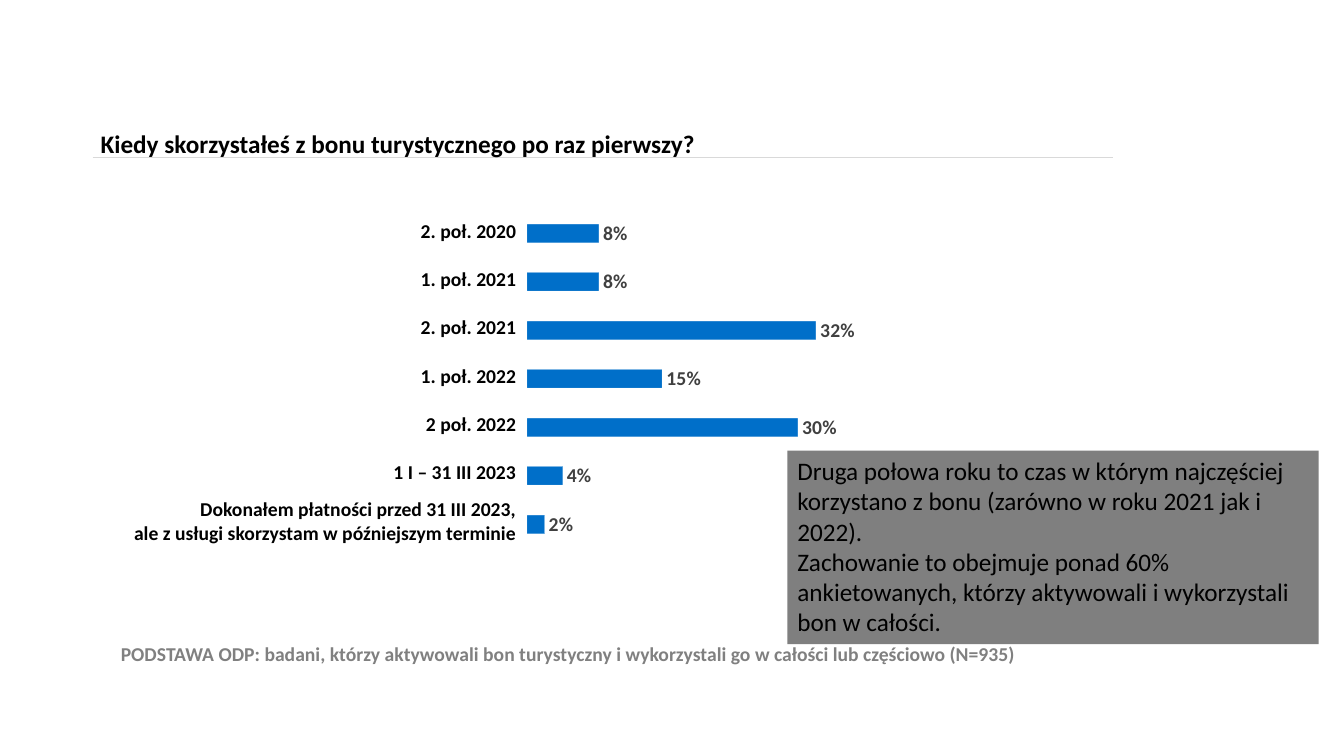
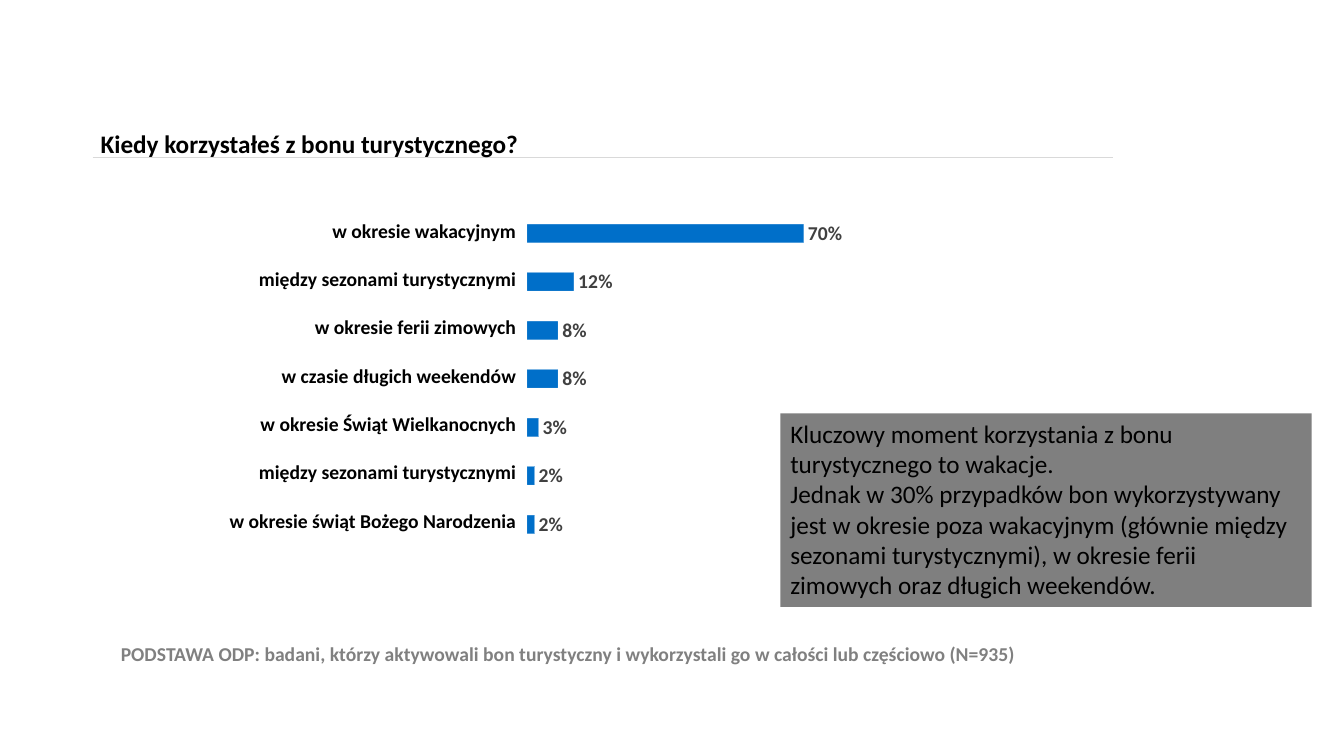
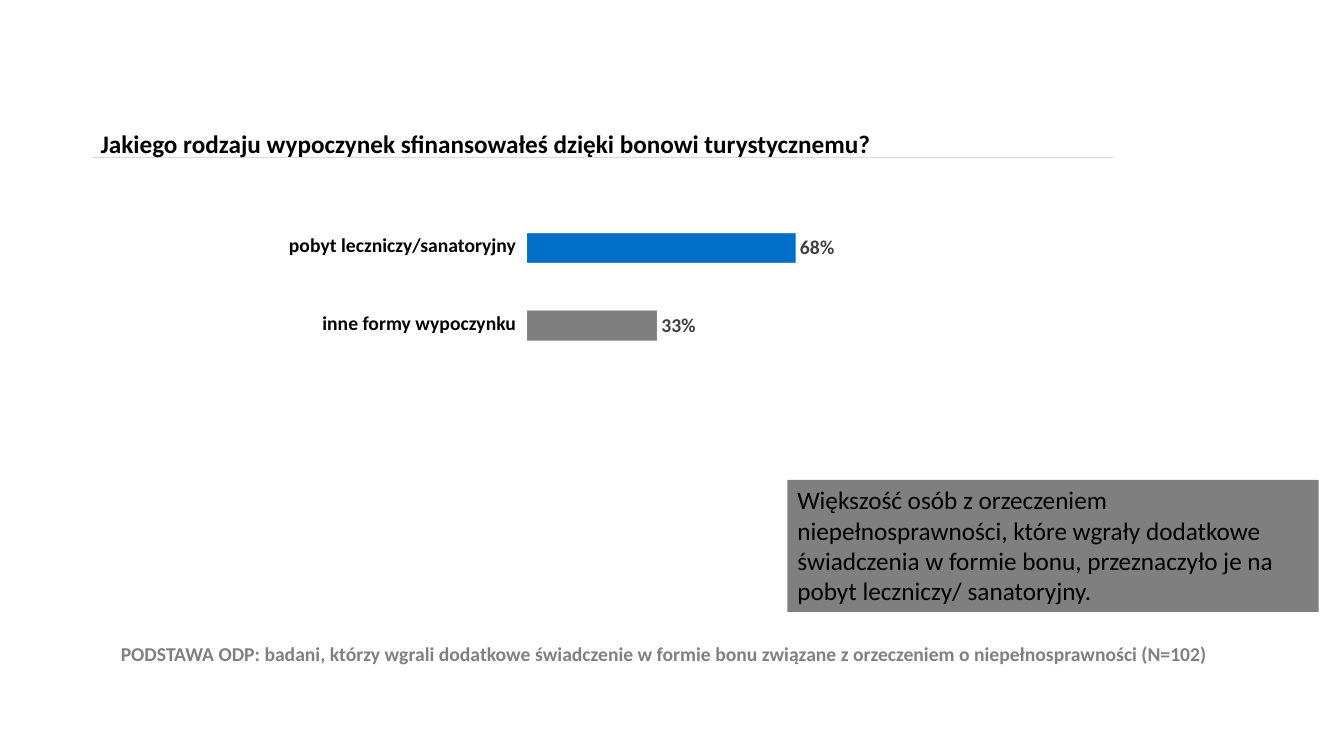
from lxml import etree
from pptx import Presentation
from pptx.chart.data import CategoryChartData as ChartData
from pptx.dml.color import RGBColor
from pptx.enum.chart import XL_CHART_TYPE as Kind, XL_LABEL_POSITION as Place
from pptx.enum.chart import XL_TICK_LABEL_POSITION as Labels, XL_TICK_MARK as Tick
from pptx.enum.shapes import MSO_CONNECTOR as Line
from pptx.enum.text import MSO_ANCHOR as Anchor, MSO_AUTO_SIZE as Size, PP_ALIGN as Align
from pptx.oxml import parse_xml
from pptx.oxml.ns import nsdecls, qn
from pptx.util import Inches, Pt

BLACK = RGBColor(0, 0, 0)
WHITE = RGBColor(255, 255, 255)
BLUE = RGBColor(0x00, 0x6F, 0xC9)
GREY = RGBColor(0x7F, 0x7F, 0x7F)
NOTE = RGBColor(0x80, 0x80, 0x80)
DARK = RGBColor(0x40, 0x40, 0x40)
RULE = RGBColor(0xD9, 0xD9, 0xD9)

FACE = "Calibri"
TITLE = dict(name=FACE, size=Pt(18), bold=True, color=BLACK)
LABEL = dict(name=FACE, size=Pt(14), bold=True, color=BLACK)
BASE = dict(LABEL, color=NOTE)
BODY = dict(TITLE, bold=False)
VALUE = dict(LABEL, color=DARK)

PLOT = dict(x=0.525, y=0.085, w=0.385, h=0.893)
CHART = (0.94, 1.71, 8.16, 4.31)

USERS = "PODSTAWA ODP: badani, którzy aktywowali bon turystyczny i wykorzystali go w całości lub częściowo (N=935)"

# bars: label, value, colour; slots: bar places on the axis; callout: left, top, height
SLIDES = [
    dict(
        title="Kiedy skorzystałeś z bonu turystycznego po raz pierwszy?",
        bars=[
            ("2. poł. 2020", 0.08, BLUE),
            ("1. poł. 2021", 0.08, BLUE),
            ("2. poł. 2021", 0.32, BLUE),
            ("1. poł. 2022", 0.15, BLUE),
            ("2 poł. 2022", 0.3, BLUE),
            ("1 I – 31 III 2023", 0.04, BLUE),
            ("Dokonałem płatności przed 31 III 2023,\n"
             "ale z usługi skorzystam w późniejszym terminie", 0.02, BLUE),
        ],
        slots=8, top=0.35, base=USERS, callout=(7.81, 4.47, 1.92),
        text="Druga połowa roku to czas w którym najczęściej korzystano z bonu "
             "(zarówno w roku 2021 jak i 2022).\n"
             "Zachowanie to obejmuje ponad 60% ankietowanych, którzy aktywowali "
             "i wykorzystali bon w całości.",
    ),
    dict(
        title="Kiedy korzystałeś z bonu turystycznego?",
        bars=[
            ("w okresie wakacyjnym", 0.7, BLUE),
            ("między sezonami turystycznymi", 0.12, BLUE),
            ("w okresie ferii zimowych", 0.08, BLUE),
            ("w czasie długich weekendów", 0.08, BLUE),
            ("w okresie Świąt Wielkanocnych", 0.03, BLUE),
            ("między sezonami turystycznymi", 0.02, BLUE),
            ("w okresie świąt Bożego Narodzenia", 0.02, BLUE),
        ],
        slots=8, top=0.8, base=USERS, callout=(7.74, 4.1, 1.92),
        text="Kluczowy moment korzystania z bonu turystycznego to wakacje.\n"
             "Jednak w 30% przypadków bon wykorzystywany jest w okresie poza wakacyjnym "
             "(głównie między sezonami turystycznymi), w okresie ferii zimowych "
             "oraz długich weekendów.",
    ),
    dict(
        title="Jakiego rodzaju wypoczynek sfinansowałeś dzięki bonowi turystycznemu?",
        bars=[
            ("pobyt leczniczy/sanatoryjny", 0.68, BLUE),
            ("inne formy wypoczynku", 0.33, GREY),
        ],
        slots=5, top=0.8, callout=(7.81, 4.76, 1.31),
        base="PODSTAWA ODP: badani, którzy wgrali dodatkowe świadczenie w formie bonu "
             "związane z orzeczeniem o niepełnosprawności (N=102)",
        text="Większość osób z orzeczeniem niepełnosprawności, które wgrały dodatkowe "
             "świadczenia w formie bonu, przeznaczyło je na pobyt leczniczy/ sanatoryjny.",
    ),
]


def style(font, look):
    for key, value in look.items():
        if key == "color":
            font.color.rgb = value
        else:
            setattr(font, key, value)


def write(frame, text, look, align=Align.LEFT):
    frame.word_wrap = True
    frame.text = text
    for para in frame.paragraphs:
        para.alignment = align
        for run in para.runs:
            style(run.font, look)


def add_text(slide, at, text, look, anchor=Anchor.TOP):
    box = slide.shapes.add_textbox(*map(Inches, at))
    write(box.text_frame, text, look)
    box.text_frame.vertical_anchor = anchor
    return box


def add_rule(slide):
    ends = map(Inches, (0.92, 1.56, 11.04, 1.56))
    rule = slide.shapes.add_connector(Line.STRAIGHT, *ends)
    rule.line.color.rgb = RULE
    rule.line.width = Pt(0.75)
    etree.SubElement(rule._element.spPr, qn("a:effectLst"))


def paint(form, color):
    """Fill a bar and give it a half-clear white edge."""
    form.fill.solid()
    form.fill.fore_color.rgb = color
    form.line.color.rgb = WHITE
    form.line.width = Pt(0.75)
    tint = form.line._ln.find(".//" + qn("a:srgbClr"))
    etree.SubElement(tint, qn("a:alpha"), val="50000")


def set_plot(chart):
    """Fix the inner plot area as shares of the chart frame."""
    sizes = "".join(f'<c:{key} val="{val}"/>' for key, val in PLOT.items())
    area = chart._chartSpace.chart.plotArea
    for old in area.findall(qn("c:layout")):
        area.remove(old)
    area.insert(0, parse_xml(
        f'<c:layout {nsdecls("c")}><c:manualLayout><c:layoutTarget val="inner"/>'
        f'<c:xMode val="edge"/><c:yMode val="edge"/>{sizes}</c:manualLayout></c:layout>'))


def add_bars(slide, bars, slots, top):
    data = ChartData(number_format="0%")
    data.categories = [str(n + 1) for n in range(slots)]
    values = [value for _, value, _ in bars]
    data.add_series("Series 1", values + [None] * (slots - len(bars)))
    chart = slide.shapes.add_chart(Kind.BAR_CLUSTERED, *map(Inches, CHART), data).chart
    chart.has_legend = chart.has_title = False
    style(chart.font, dict(name=FACE, size=Pt(10), color=BLACK))
    set_plot(chart)

    cats, axis = chart.category_axis, chart.value_axis
    cats.visible = False
    cats.reverse_order = True
    axis.minimum_scale, axis.maximum_scale = 0, top
    axis.has_major_gridlines = False
    axis.major_tick_mark = axis.minor_tick_mark = Tick.NONE
    axis.tick_label_position = Labels.NONE
    axis.format.line.fill.background()

    plot = chart.plots[0]
    plot.gap_width = 155
    plot.vary_by_categories = False
    series = plot.series[0]
    paint(series.format, BLUE)
    for n, (_, _, color) in enumerate(bars):
        if color != BLUE:
            paint(series.points[n].format, color)

    marks = series.data_labels
    marks.show_value = True
    marks.position = Place.OUTSIDE_END
    marks.number_format = "0%"
    marks.number_format_is_linked = False
    style(marks.font, VALUE)


def add_labels(slide, bars, slots):
    """Put one table row beside each bar."""
    high = round(CHART[3] * PLOT["h"] / slots, 2)
    at = map(Inches, (0.81, 2.05, 4.32, high * len(bars)))
    table = slide.shapes.add_table(len(bars), 1, *at).table
    table.first_row = table.horz_banding = False
    for n, (label, _, _) in enumerate(bars):
        table.rows[n].height = Inches(high)
        cell = table.cell(n, 0)
        cell.fill.background()
        cell.vertical_anchor = Anchor.MIDDLE
        cell.margin_left = cell.margin_top = cell.margin_right = Inches(0.01)
        cell.margin_bottom = 0
        write(cell.text_frame, label, LABEL, Align.RIGHT)


def add_callout(slide, at, text):
    left, top, high = at
    box = add_text(slide, (left, top, 5.27, high), text, BODY)
    box.text_frame.auto_size = Size.SHAPE_TO_FIT_TEXT
    box.fill.solid()
    box.fill.fore_color.rgb = GREY


def main():
    deck = Presentation()
    deck.slide_width, deck.slide_height = Inches(13.33), Inches(7.5)
    for item in SLIDES:
        slide = deck.slides.add_slide(deck.slide_layouts[6])
        bars, slots = item["bars"], item["slots"]
        add_rule(slide)
        add_bars(slide, bars, slots, item["top"])
        title = add_text(slide, (0.9, 1.03, 12.43, 0.76), item["title"], TITLE, Anchor.MIDDLE)
        para = title.text_frame.paragraphs[0]
        para.line_spacing, para.space_after = 1.07, Pt(8)
        add_text(slide, (1.1, 6.32, 11.44, 0.34), item["base"], BASE)
        add_labels(slide, bars, slots)
        add_callout(slide, item["callout"], item["text"])
    deck.save("out.pptx")


if __name__ == "__main__":
    main()
